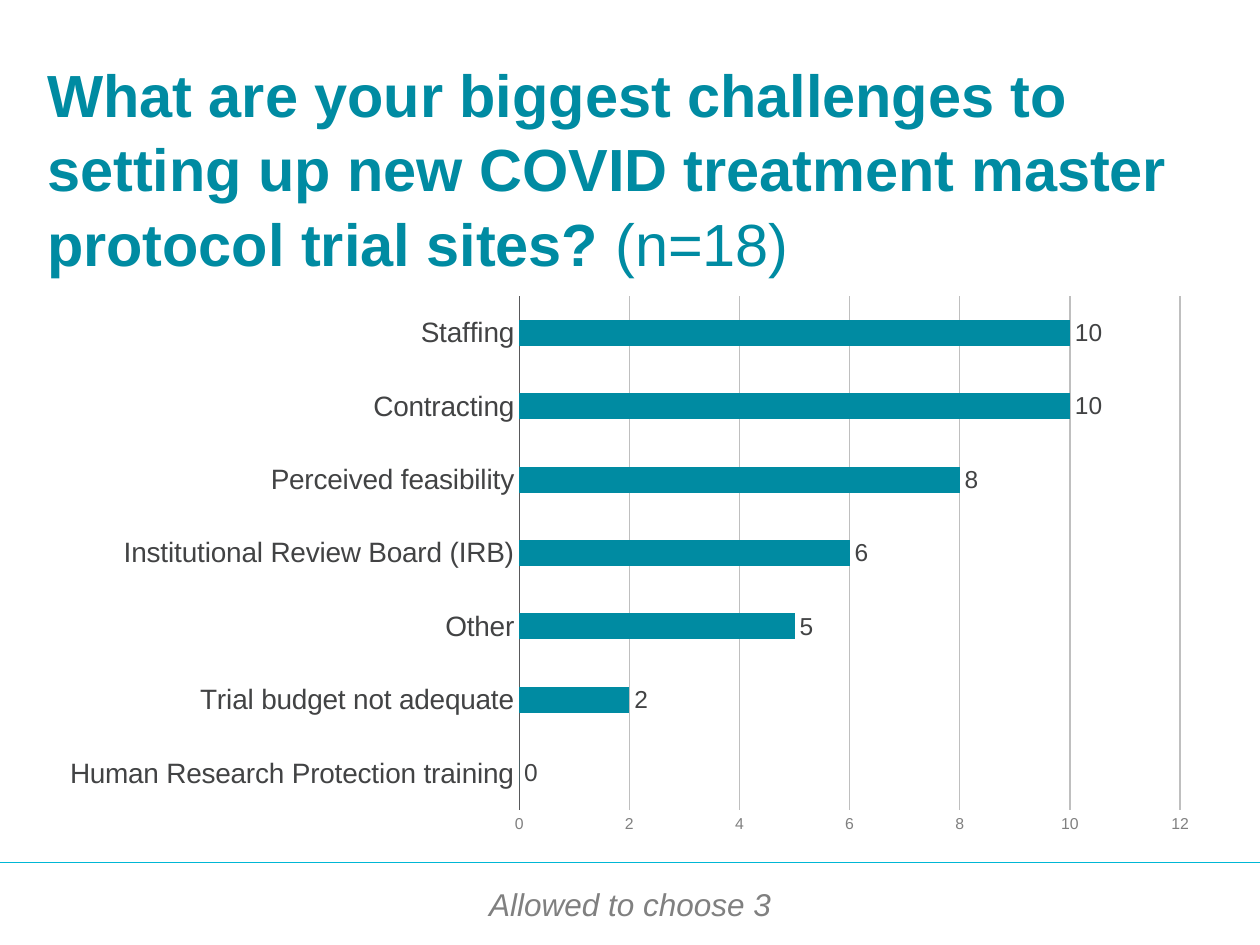
from lxml import etree
from pptx import Presentation
from pptx.chart.data import CategoryChartData
from pptx.dml.color import RGBColor
from pptx.enum.chart import XL_CHART_TYPE, XL_LABEL_POSITION, XL_TICK_MARK
from pptx.enum.shapes import MSO_CONNECTOR, MSO_SHAPE
from pptx.enum.text import MSO_ANCHOR, PP_ALIGN
from pptx.oxml import parse_xml
from pptx.oxml.ns import nsdecls, qn
from pptx.util import Pt

TEAL = RGBColor(0x00, 0x8B, 0xA2)
DARK_TEAL = RGBColor(0x00, 0x68, 0x79)
CYAN = RGBColor(0x00, 0xB7, 0xD5)
CHARCOAL = RGBColor(0x42, 0x43, 0x44)
AXIS_GRAY = RGBColor(0x58, 0x59, 0x5B)
GRAY = RGBColor(0x80, 0x80, 0x80)
GRID_GRAY = RGBColor(0xBF, 0xBF, 0xBF)
WHITE = RGBColor(0xFF, 0xFF, 0xFF)

CHALLENGES = [
    ("Human Research Protection training", 0),
    ("Trial budget not adequate", 2),
    ("Other", 5),
    ("Institutional Review Board (IRB)", 6),
    ("Perceived feasibility", 8),
    ("Contracting", 10),
    ("Staffing", 10),
]


def set_font(font, size, color):
    font.name = "Arial"
    font.size = Pt(size)
    font.color.rgb = color


prs = Presentation()
prs.slide_width, prs.slide_height = Pt(720), Pt(540)
slide = prs.slides.add_slide(prs.slide_layouts[5])

footer = slide.shapes.add_shape(MSO_SHAPE.RECTANGLE, Pt(0), Pt(492), Pt(720), Pt(48))
footer.shadow.inherit = False
footer.fill.solid()
footer.fill.fore_color.rgb = WHITE
footer.line.fill.background()

divider = slide.shapes.add_connector(MSO_CONNECTOR.STRAIGHT, Pt(0), Pt(493), Pt(720), Pt(493))
divider.line.color.rgb = CYAN
divider.line.width = Pt(0.75)
etree.SubElement(divider._element.spPr, qn("a:effectLst"))

title = slide.shapes.title
title.left, title.top, title.width, title.height = Pt(27), Pt(85), Pt(666), Pt(60.5)
heading = title.text_frame
heading.word_wrap = True
heading.vertical_anchor = MSO_ANCHOR.MIDDLE
heading.margin_left = heading.margin_top = heading.margin_right = Pt(0)
heading.margin_bottom = Pt(40)
question = heading.paragraphs[0]
question.alignment = PP_ALIGN.LEFT
question.line_spacing = 1.04
set_font(question.font, 34, TEAL)
for words, bold in [
    ("What are your biggest challenges to setting up new COVID treatment master protocol trial sites? ", True),
    ("(n=18)", False),
]:
    run = question.add_run()
    run.text = words
    run.font.bold = bold

note = slide.shapes.add_textbox(Pt(269), Pt(502), Pt(182), Pt(29)).text_frame
note.word_wrap = False
choice = note.paragraphs[0]
choice.text = "Allowed to choose 3"
choice.alignment = PP_ALIGN.CENTER
choice.font.italic = True
set_font(choice.font, 18, GRAY)

answers = CategoryChartData(number_format="0")
answers.categories = [name for name, count in CHALLENGES]
answers.add_series("Series 1", [count for name, count in CHALLENGES])
chart = slide.shapes.add_chart(
    XL_CHART_TYPE.BAR_CLUSTERED, Pt(27), Pt(163), Pt(666), Pt(319), answers
).chart
chart.has_legend = False
chart.has_title = False
set_font(chart.font, 10, DARK_TEAL)

plot = chart.plots[0]
plot.gap_width = 182
plot.vary_by_categories = False
bars = plot.series[0].format.fill
bars.solid()
bars.fore_color.rgb = TEAL
plot.has_data_labels = True
labels = plot.data_labels
labels.show_value = True
labels.position = XL_LABEL_POSITION.OUTSIDE_END
set_font(labels.font, 14, CHARCOAL)

names = chart.category_axis
names.major_tick_mark = XL_TICK_MARK.NONE
names.format.line.color.rgb = AXIS_GRAY
names.format.line.width = Pt(0.75)
set_font(names.tick_labels.font, 16, CHARCOAL)

counts = chart.value_axis
counts.minimum_scale, counts.maximum_scale, counts.major_unit = 0, 12, 2
counts.major_tick_mark = XL_TICK_MARK.NONE
counts.format.line.fill.background()
counts.major_gridlines.format.line.color.rgb = GRID_GRAY
counts.major_gridlines.format.line.width = Pt(0.75)
set_font(counts.tick_labels.font, 9, GRAY)

plot_area = chart._chartSpace.chart.plotArea
for old_layout in plot_area.findall(qn("c:layout")):
    plot_area.remove(old_layout)
plot_area.insert(0, parse_xml(
    f'<c:layout {nsdecls("c")}><c:manualLayout><c:layoutTarget val="inner"/>'
    '<c:xMode val="edge"/><c:yMode val="edge"/>'
    '<c:x val="0.405"/><c:y val="0.02"/><c:w val="0.567"/><c:h val="0.92"/>'
    '</c:manualLayout></c:layout>'
))

prs.save("out.pptx")
